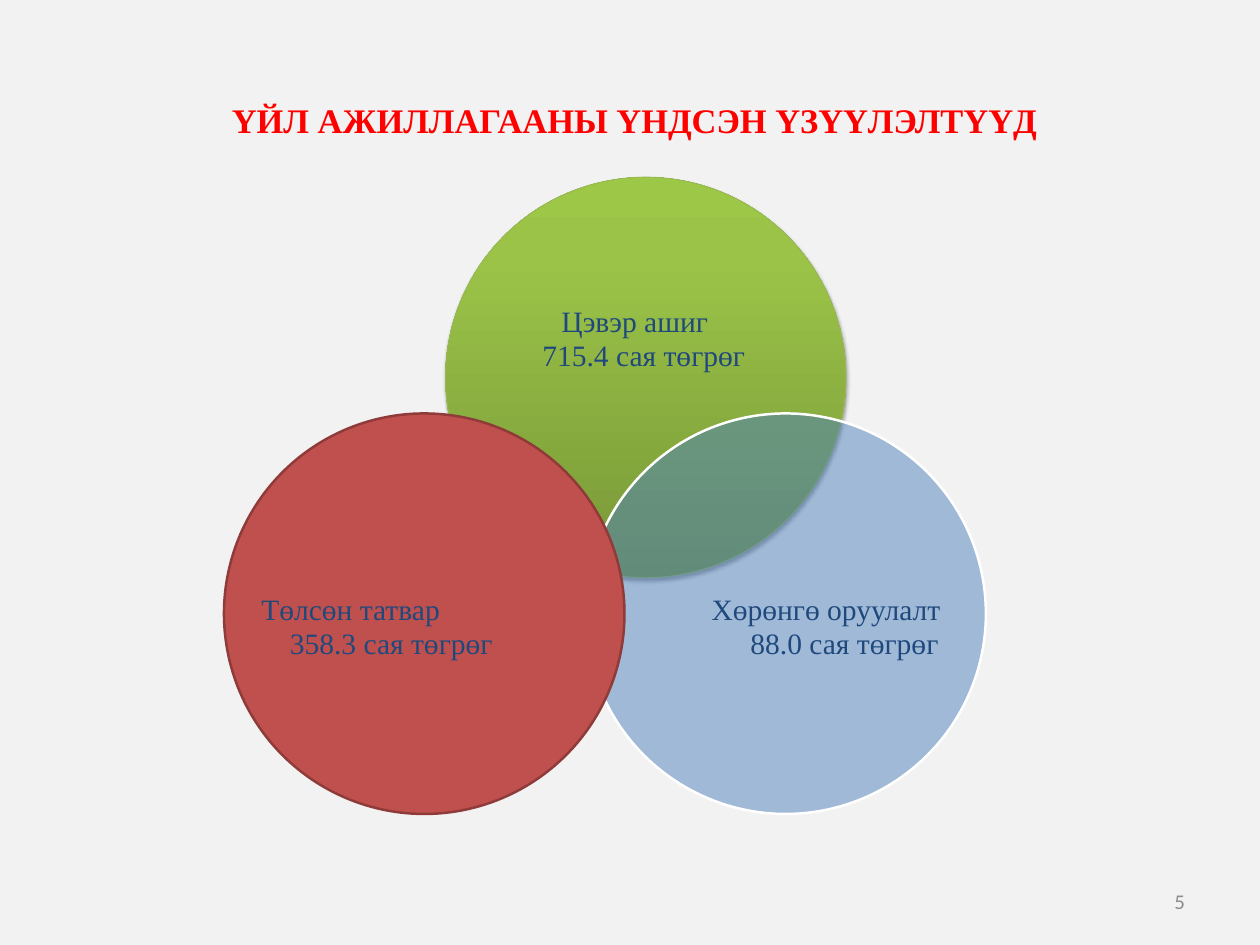
from copy import deepcopy

from lxml import etree
from pptx import Presentation
from pptx import util as u
from pptx.dml.color import RGBColor
from pptx.enum import shapes, text
from pptx.oxml.ns import qn

BACKGROUND = RGBColor(0xF2, 0xF2, 0xF2)
TITLE_RED = RGBColor(0xFF, 0x00, 0x00)
LABEL_NAVY = RGBColor(0x1F, 0x49, 0x7D)
NUMBER_GREY = RGBColor(0x8C, 0x8C, 0x8C)
GREEN_DARK = RGBColor(0x77, 0x97, 0x37)
GREEN_MID = RGBColor(0x9B, 0xC3, 0x48)
GREEN_LIGHT = RGBColor(0x9D, 0xC7, 0x46)
GREEN_LINE = RGBColor(0x98, 0xB9, 0x55)
BLUE = RGBColor(0x4F, 0x81, 0xBD)
WHITE = RGBColor(0xFF, 0xFF, 0xFF)
RED = RGBColor(0xC0, 0x50, 0x4D)
RED_LINE = RGBColor(0x8E, 0x3B, 0x39)

SERIF = "Times New Roman"
TITLE_FONT = {"name": SERIF, "size": u.Pt(28), "bold": True}
LABEL_FONT = {"name": SERIF, "size": u.Pt(24), "bold": False}
NUMBER_FONT = {"name": "Calibri", "size": u.Pt(17), "bold": False}
DIAMETER = 325.5

# Circle corners are relative to the diagram box; label boxes are fractions of the
# diameter; each line of a label has a left and a right indent in points.
CIRCLES = [
    {"corner": (180, 0), "fill": [(0, GREEN_DARK), (0.8, GREEN_MID), (1, GREEN_LIGHT)],
     "line": (GREEN_LINE, 0.75), "alpha": None, "shadow": True,
     "label": (0.13, 0.18, 0.73, 0.45),
     "lines": [("Цэвэр ашиг", 0, 14.5), ("715.4 сая төгрөг", 0, 0)]},
    {"corner": (293.7, 192), "fill": BLUE, "line": (WHITE, 2), "alpha": 50, "shadow": False,
     "label": (0.31, 0.26, 0.6, 0.55),
     "lines": [("Хөрөнгө оруулалт", 0, 6), ("88.0 сая төгрөг", 24, 0)]},
    {"corner": (0, 192), "fill": RED, "line": (RED_LINE, 2), "alpha": None, "shadow": False,
     "label": (0.09, 0.26, 0.6, 0.55),
     "lines": [("Төлсөн татвар", 0, 48), ("358.3 сая төгрөг", 18, 0)]},
]


def set_format(target, values):
    for name, value in values.items():
        setattr(target, name, value)


def place(shape, left, top, width, height):
    set_format(shape, {"left": u.Pt(left), "top": u.Pt(top),
                       "width": u.Pt(width), "height": u.Pt(height)})


def set_frame(frame, anchor, left=0, right=0, top=0, bottom=0):
    set_format(frame, {"word_wrap": True, "auto_size": text.MSO_AUTO_SIZE.NONE,
                       "vertical_anchor": anchor,
                       "margin_left": u.Pt(left), "margin_right": u.Pt(right),
                       "margin_top": u.Pt(top), "margin_bottom": u.Pt(bottom)})


def write(paragraph, words, font, color, alignment):
    paragraph.alignment = alignment
    run = paragraph.add_run()
    run.text = words
    set_format(run.font, font)
    run.font.color.rgb = color


def fill_gradient(shape, stops):
    shape.fill.gradient()
    stop_list = shape._element.spPr.find(".//" + qn("a:gsLst"))
    while len(stop_list) < len(stops):
        stop_list.append(deepcopy(stop_list[-1]))
    for stop, (position, color) in zip(shape.fill.gradient_stops, stops):
        stop.position = position
        stop.color.rgb = color
    shape.fill.gradient_angle = 90


def add_soft_shadow(shape):
    effects = shape._element.spPr.find(qn("a:effectLst"))
    shadow = etree.SubElement(effects, qn("a:outerShdw"), blurRad=str(u.Pt(3.1)),
                              dist=str(u.Pt(1.8)), dir="5400000", rotWithShape="0")
    color = etree.SubElement(shadow, qn("a:srgbClr"), val="000000")
    etree.SubElement(color, qn("a:alpha"), val="35000")


def add_title(slide, left, top, width, height):
    title = slide.shapes.title
    place(title, left, top, width, height)
    # The wider left margin moves the centred heading to the right
    set_frame(title.text_frame, text.MSO_ANCHOR.BOTTOM, 52, 10, 5, 5)
    write(title.text_frame.paragraphs[0], "ҮЙЛ АЖИЛЛАГААНЫ ҮНДСЭН ҮЗҮҮЛЭЛТҮҮД",
          TITLE_FONT, TITLE_RED, text.PP_ALIGN.CENTER)


def add_circle(group, circle, left, top):
    shape = group.shapes.add_shape(shapes.MSO_SHAPE.OVAL, 0, 0, 0, 0)
    place(shape, left, top, DIAMETER, DIAMETER)
    shape.shadow.inherit = False
    if isinstance(circle["fill"], list):
        fill_gradient(shape, circle["fill"])
    else:
        shape.fill.solid()
        shape.fill.fore_color.rgb = circle["fill"]
    if circle["alpha"]:
        color = shape._element.spPr.find(qn("a:solidFill"))[0]
        etree.SubElement(color, qn("a:alpha"), val=str(circle["alpha"] * 1000))
    if circle["shadow"]:
        add_soft_shadow(shape)
    line_color, line_width = circle["line"]
    shape.line.color.rgb = line_color
    shape.line.width = u.Pt(line_width)


def add_label(group, circle, left, top):
    x, y, width, height = (part * DIAMETER for part in circle["label"])
    label = group.shapes.add_textbox(0, 0, 0, 0)
    place(label, left + x, top + y, width, height)
    frame = label.text_frame
    set_frame(frame, text.MSO_ANCHOR.MIDDLE)
    for number, (words, indent_left, indent_right) in enumerate(circle["lines"]):
        paragraph = frame.add_paragraph() if number else frame.paragraphs[0]
        write(paragraph, words, LABEL_FONT, LABEL_NAVY, text.PP_ALIGN.CENTER)
        paragraph.line_spacing = 0.95
        properties = paragraph._p.get_or_add_pPr()
        properties.set("marL", str(u.Pt(indent_left)))
        properties.set("marR", str(u.Pt(indent_right)))


def add_diagram(slide, left, top):
    group = slide.shapes.add_group_shape()
    for circle in CIRCLES:
        x, y = circle["corner"]
        add_circle(group, circle, left + x, top + y)
        add_label(group, circle, left + x, top + y)


def add_slide_number(slide, left, top, width, height):
    box = slide.shapes.add_textbox(0, 0, 0, 0)
    place(box, left, top, width, height)
    set_frame(box.text_frame, text.MSO_ANCHOR.MIDDLE, 10, 10, 5, 5)
    write(box.text_frame.paragraphs[0], "5", NUMBER_FONT, NUMBER_GREY, text.PP_ALIGN.RIGHT)


def main():
    presentation = Presentation()
    presentation.slide_width = u.Pt(1024)
    presentation.slide_height = u.Pt(768)
    slide = presentation.slides.add_slide(presentation.slide_layouts[5])
    slide.background.fill.solid()
    slide.background.fill.fore_color.rgb = BACKGROUND

    add_title(slide, 51, 30, 887, 89)
    add_diagram(slide, 182, 144)
    add_slide_number(slide, 734, 712, 239, 41)
    presentation.save("out.pptx")


if __name__ == "__main__":
    main()
